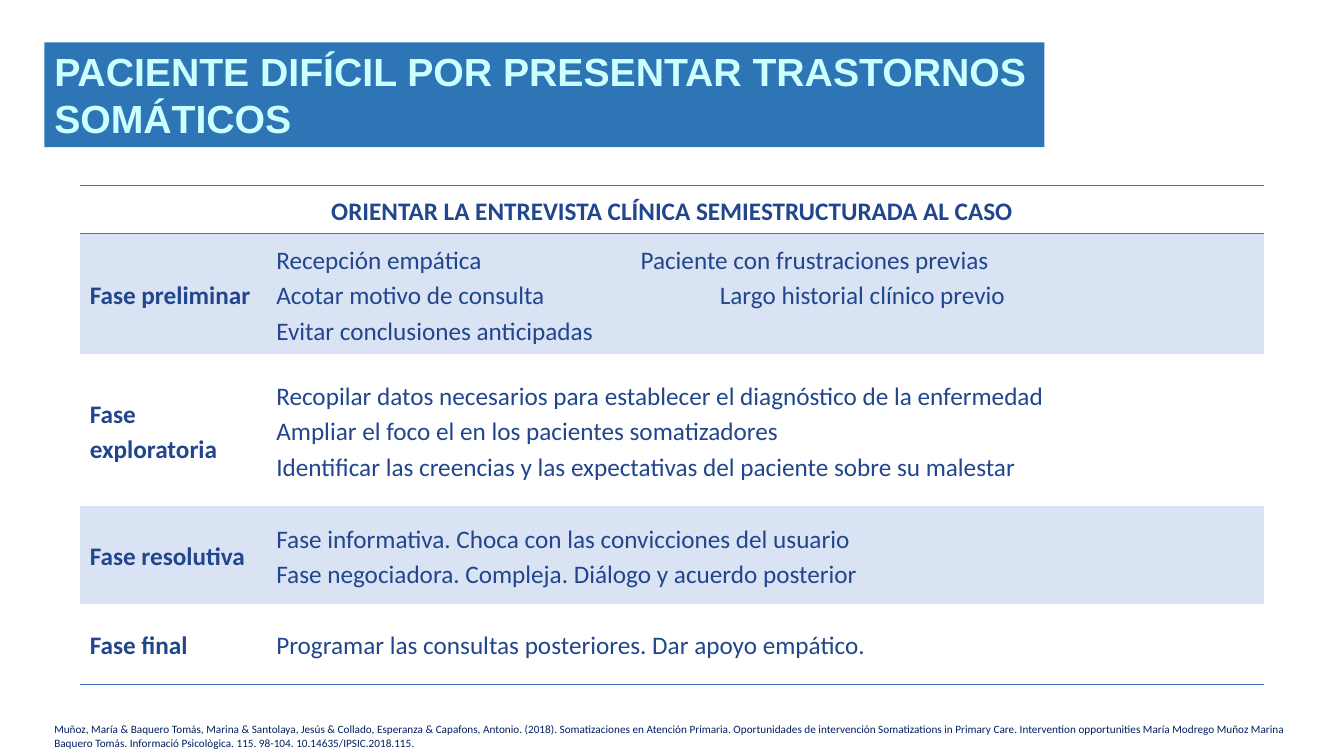
from dataclasses import dataclass
from typing import Optional

from lxml.etree import SubElement
from pptx import Presentation
from pptx.dml.color import RGBColor
from pptx.enum.shapes import MSO_SHAPE
from pptx.enum.text import MSO_ANCHOR, PP_ALIGN
from pptx.oxml.ns import qn
from pptx.util import Emu, Inches, Pt

BLUE = RGBColor(0x2E, 0x75, 0xB6)
AQUA = RGBColor(0xCC, 0xFF, 0xFF)
INK = RGBColor(0x21, 0x46, 0x8D)
NAVY = RGBColor(0x00, 0x20, 0x60)
RULE = RGBColor(0x44, 0x72, 0xC4)
BAND = RGBColor(0xDA, 0xE3, 0xF3)

WIDE, HIGH = Inches(13.33), Inches(7.5)


@dataclass
class Line:
    text: str
    tab: Optional[float] = None  # tab stop, percent of slide width


@dataclass
class Phase:
    name: str
    high: float  # percent of slide height
    lines: list[Line]


HEAD = "ORIENTAR LA ENTREVISTA CLÍNICA SEMIESTRUCTURADA AL CASO"
HEAD_HIGH = 6.4
COLS = [13.88, 74.27]
PHASES = [
    Phase("Fase preliminar", 15.87, [
        Line("Recepción empática\tPaciente con frustraciones previas", 27.1),
        Line("Acotar motivo de consulta\tLargo historial clínico previo", 33),
        Line("Evitar conclusiones anticipadas")]),
    Phase("Fase exploratoria", 20.13, [
        Line("Recopilar datos necesarios para establecer el diagnóstico de la enfermedad"),
        Line("Ampliar el foco el en los pacientes somatizadores"),
        Line("Identificar las creencias y las expectativas del paciente sobre su malestar")]),
    Phase("Fase resolutiva", 12.93, [
        Line("Fase informativa. Choca con las convicciones del usuario"),
        Line("Fase negociadora. Compleja. Diálogo y acuerdo posterior")]),
    Phase("Fase final", 10.67, [
        Line("Programar las consultas posteriores. Dar apoyo empático.")]),
]
SOURCE = (
    "Muñoz, María & Baquero Tomás, Marina & Santolaya, Jesús & Collado, Esperanza "
    "& Capafons, Antonio. (2018). Somatizaciones en Atención Primaria. Oportunidades "
    "de intervención Somatizations in Primary Care. Intervention opportunities María "
    "Modrego Muñoz Marina Baquero Tomás. Informació Psicològica. 115. 98-104. "
    "10.14635/IPSIC.2018.115."
)


def across(share: float) -> Emu:
    return Emu(round(WIDE * share / 100))


def down(share: float) -> Emu:
    return Emu(round(HIGH * share / 100))


def style(para, face: str, size: float, color: RGBColor, bold: bool = False) -> None:
    font = para.font
    font.name, font.size, font.bold = face, Pt(size), bold
    font.color.rgb = color


def edge(cell, ruled: str) -> None:
    """Rule the named sides (T, B) and clear the others."""
    props = cell._tc.get_or_add_tcPr()
    for side in "LRTB":
        line = SubElement(props, qn(f"a:ln{side}"), w=str(Pt(1)))
        if side in ruled:
            fill = SubElement(line, qn("a:solidFill"))
            SubElement(fill, qn("a:srgbClr"), val=str(RULE))
        else:
            SubElement(line, qn("a:noFill"))


def write(cell, lines: list[Line], align: PP_ALIGN, bold: bool,
          band: bool = False, ruled: str = "") -> None:
    cell.margin_top = cell.margin_bottom = 0
    cell.vertical_anchor = MSO_ANCHOR.MIDDLE
    edge(cell, ruled)
    if band:
        cell.fill.solid()
        cell.fill.fore_color.rgb = BAND
    else:
        cell.fill.background()
    frame = cell.text_frame
    for i, line in enumerate(lines):
        para = frame.add_paragraph() if i else frame.paragraphs[0]
        para.text = line.text
        para.alignment, para.line_spacing = align, 1.15
        if line.tab is not None:
            stops = SubElement(para._p.get_or_add_pPr(), qn("a:tabLst"))
            SubElement(stops, qn("a:tab"), pos=str(across(line.tab)), algn="l")
        style(para, "Calibri", 18, INK, bold)


def main() -> None:
    deck = Presentation()
    deck.slide_width, deck.slide_height = WIDE, HIGH
    shapes = deck.slides.add_slide(deck.slide_layouts[6]).shapes

    # Phase table
    size = len(PHASES) + 1
    full = HEAD_HIGH + sum(phase.high for phase in PHASES)
    table = shapes.add_table(size, len(COLS), across(5.93), down(24.53),
                             across(sum(COLS)), down(full)).table
    table.first_row = table.horz_banding = False
    for col, share in zip(table.columns, COLS):
        col.width = across(share)
    table.rows[0].height = down(HEAD_HIGH)
    table.cell(0, 0).merge(table.cell(0, 1))
    write(table.cell(0, 0), [Line(HEAD)], PP_ALIGN.CENTER, True, ruled="TB")
    edge(table.cell(0, 1), "TB")
    table.cell(0, 1).fill.background()
    for row, phase in enumerate(PHASES, 1):
        table.rows[row].height = down(phase.high)
        ruled = ("T" if row == 1 else "") + ("B" if row == size - 1 else "")
        for col, lines in enumerate([[Line(phase.name)], phase.lines]):
            write(table.cell(row, col), lines, PP_ALIGN.JUSTIFY, col == 0,
                  row % 2 == 1, ruled)

    # Title bar
    bar = shapes.add_shape(MSO_SHAPE.RECTANGLE, across(3.3), down(5.6),
                           across(74.42), down(13.87))
    bar.shadow.inherit = False
    bar.fill.solid()
    bar.fill.fore_color.rgb = BLUE
    bar.line.fill.background()
    frame = bar.text_frame
    frame.word_wrap, frame.vertical_anchor = True, MSO_ANCHOR.TOP
    para = frame.paragraphs[0]
    para.text = "PACIENTE DIFÍCIL POR PRESENTAR TRASTORNOS SOMÁTICOS"
    para.alignment = PP_ALIGN.LEFT
    style(para, "Arial", 28, AQUA, True)

    # Citation
    note = shapes.add_textbox(across(3.3), down(96), across(95.5), down(2.67))
    frame = note.text_frame
    frame.word_wrap, frame.vertical_anchor = True, MSO_ANCHOR.MIDDLE
    para = frame.paragraphs[0]
    para.text = SOURCE
    style(para, "Calibri", 8, NAVY)

    deck.save("out.pptx")


if __name__ == "__main__":
    main()
